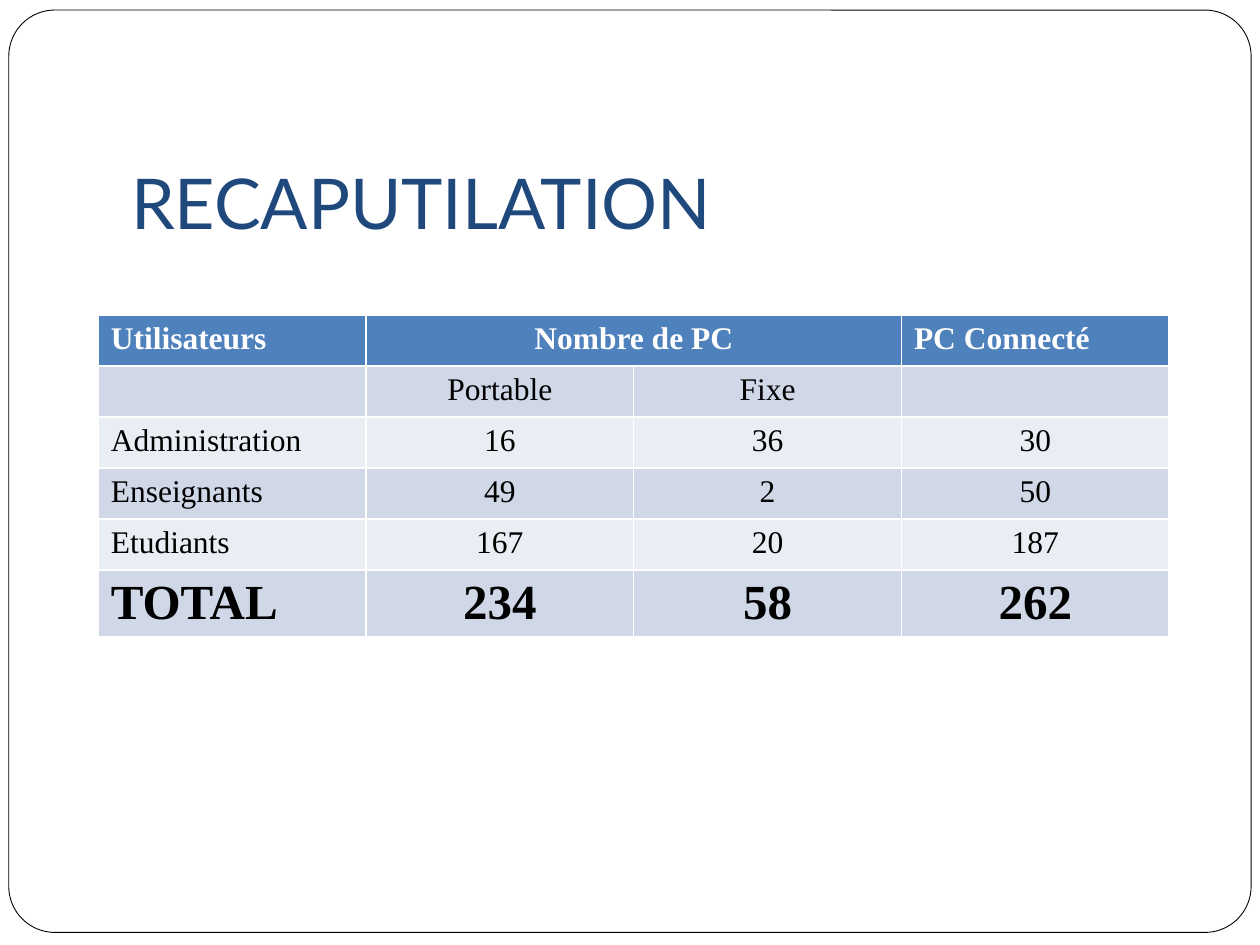
from dataclasses import dataclass

from pptx import Presentation
from pptx.dml.color import RGBColor as RGB
from pptx.enum.shapes import MSO_SHAPE as Shape
from pptx.enum.text import MSO_ANCHOR as Anchor, PP_ALIGN as Align
from pptx.util import Inches, Pt


@dataclass(frozen=True)
class Theme:
    white: RGB = RGB(255, 255, 255)
    black: RGB = RGB(0, 0, 0)
    navy: RGB = RGB.from_string("1F497D")
    head: RGB = RGB.from_string("4F81BD")
    bands: tuple = (RGB.from_string("E9EDF4"), RGB.from_string("D0D8E8"))
    sans: str = "Lato"
    serif: str = "Times New Roman"
    title: Pt = Pt(40)
    text: Pt = Pt(18)
    total: Pt = Pt(28)


THEME = Theme()
WIDE, HIGH = Inches(10), Inches(7.5)

ROWS = [
    ["Utilisateurs", "Nombre de PC", "", "PC Connecté"],
    ["", "Portable", "Fixe", ""],
    ["Administration", "16", "36", "30"],
    ["Enseignants", "49", "2", "50"],
    ["Etudiants", "167", "20", "187"],
    ["TOTAL", "234", "58", "262"],
]
LAST = len(ROWS) - 1
TALL = 1.3  # height of the total row, in plain rows


def area(left, top, width, height):
    """Turn inches on the slide into a box."""
    return Inches(left), Inches(top), Inches(width), Inches(height)


def style(para, size, color, face, bold=False):
    font = para.font
    font.size, font.name, font.bold = size, face, bold
    font.color.rgb = color


def add_frame(slide, box):
    frame = slide.shapes.add_shape(Shape.ROUNDED_RECTANGLE, *box)
    frame.adjustments[0] = 0.05
    frame.shadow.inherit = False
    frame.fill.solid()
    frame.fill.fore_color.rgb = THEME.white
    frame.line.color.rgb = THEME.black
    frame.line.width = Pt(0.5)
    # Send the frame behind the title
    slide.shapes._spTree.insert(2, frame._element)


def add_title(slide, box, text):
    title = slide.shapes.title
    title.left, title.top, title.width, title.height = box
    frame = title.text_frame
    frame.text = text
    frame.vertical_anchor = Anchor.BOTTOM
    frame.margin_bottom = Inches(0.1)
    para = frame.paragraphs[0]
    para.alignment = Align.LEFT
    style(para, THEME.title, THEME.navy, THEME.sans)


def fill_cell(cell, row, col, text):
    head, total = row == 0, row == LAST
    cell.fill.solid()
    cell.fill.fore_color.rgb = THEME.head if head else THEME.bands[row % 2]
    cell.text = text
    para = cell.text_frame.paragraphs[0]
    # Labels and outer headings sit left, all else is centred
    left = col == 0 or (head and col == 3)
    para.alignment = Align.LEFT if left else Align.CENTER
    style(para, THEME.total if total else THEME.text,
          THEME.white if head else THEME.black, THEME.serif, head or total)


def add_grid(slide, box):
    width, height = box[2:]
    cols = len(ROWS[0])
    grid = slide.shapes.add_table(len(ROWS), cols, *box).table
    for col in grid.columns:
        col.width = width // cols
    unit = height / (LAST + TALL)
    for row, line in enumerate(ROWS):
        grid.rows[row].height = int(unit * (TALL if row == LAST else 1))
        for col, text in enumerate(line):
            fill_cell(grid.cell(row, col), row, col, text)
    # One heading spans both kinds of PC
    grid.cell(0, 1).merge(grid.cell(0, 2))


def main():
    deck = Presentation()
    deck.slide_width, deck.slide_height = WIDE, HIGH
    slide = deck.slides.add_slide(deck.slide_layouts[5])
    add_frame(slide, area(0.07, 0.08, 9.86, 7.32))
    add_title(slide, area(0.94, 0.78, 8.5, 1.25), "RECAPUTILATION")
    add_grid(slide, area(0.78, 2.5, 8.5, 2.55))
    deck.save("out.pptx")


if __name__ == "__main__":
    main()
